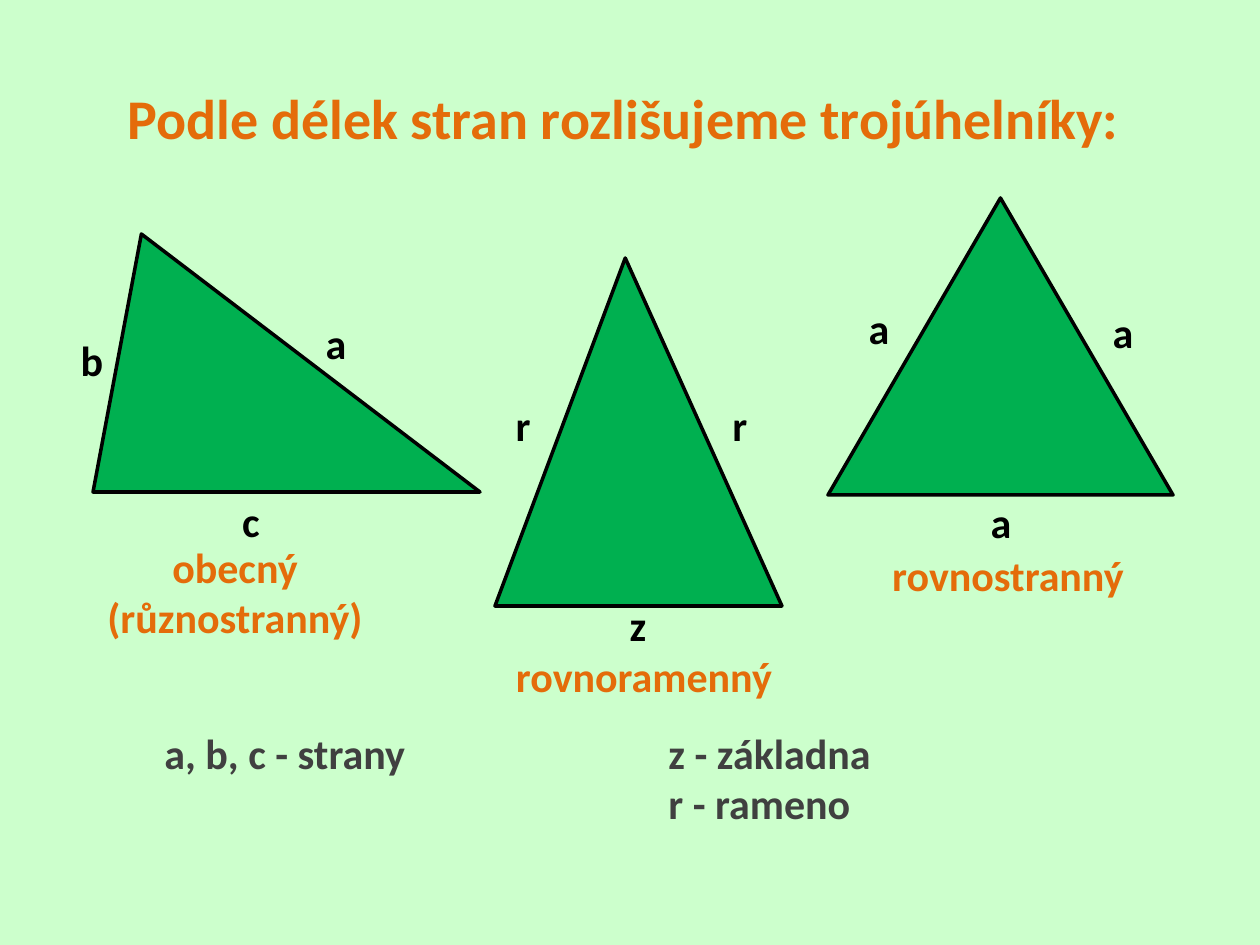
import pptx
import pptx.dml.color
import pptx.enum.shapes
import pptx.enum.text
import pptx.util
from lxml import etree

RGBColor = pptx.dml.color.RGBColor
MINT = RGBColor(0xCC, 0xFF, 0xCC)
GREEN = RGBColor(0x00, 0xB0, 0x50)
ORANGE = RGBColor(0xE4, 0x6C, 0x0A)
BLACK = RGBColor(0x00, 0x00, 0x00)
GRAY = RGBColor(0x40, 0x40, 0x40)
LEFT = pptx.enum.text.PP_ALIGN.LEFT
CENTER = pptx.enum.text.PP_ALIGN.CENTER
TOP = pptx.enum.text.MSO_ANCHOR.TOP
MIDDLE = pptx.enum.text.MSO_ANCHOR.MIDDLE
EMU_PER_PX = 914400 // 126
LINE_HEIGHT = 63
LABEL_WIDTH = 48
NAME_WIDTH = 284

TRIANGLES = [
    {
        "box": (93, 234, 387, 258),
        "apex": 0.125,
        "labels": [("b", -1, 94), ("a", 243, 77), ("c", 158, 255)],
        "name": ("obecný\n(různostranný)", 142, 301),
    },
    {
        "box": (495, 258, 287, 348),
        "apex": 0.454,
        "labels": [("r", 28, 135), ("r", 245, 135), ("z", 143, 335)],
        "name": ("rovnoramenný", 149, 386),
    },
    {
        "box": (828, 198, 345, 297),
        "apex": 0.5,
        "labels": [("a", 51, 98), ("a", 295, 102), ("a", 173, 292)],
        "name": ("rovnostranný", 180, 345),
    },
]


def px(*lengths):
    """Turn lengths in px into EMU."""
    return [pptx.util.Emu(length * EMU_PER_PX) for length in lengths]


def add_text(slide, text, box, *, color, size=24, align=CENTER, anchor=TOP, wrap=True):
    """Add a bold text box and return its text frame."""
    frame = slide.shapes.add_textbox(*px(*box)).text_frame
    frame.word_wrap = wrap
    frame.vertical_anchor = anchor
    frame.text = text
    for paragraph in frame.paragraphs:
        paragraph.alignment = align
        for run in paragraph.runs:
            run.font.name = "Calibri"
            run.font.size = pptx.util.Pt(size)
            run.font.bold = True
            run.font.color.rgb = color
    return frame


def add_triangle(slide, box, apex, labels, name):
    """Draw a triangle with its side labels and its name."""
    left, top = box[:2]
    kind = pptx.enum.shapes.MSO_SHAPE.ISOSCELES_TRIANGLE
    shape = slide.shapes.add_shape(kind, *px(*box))
    shape.adjustments[0] = apex
    shape.shadow.inherit = False
    shape.fill.solid()
    shape.fill.fore_color.rgb = GREEN
    shape.line.color.rgb = BLACK
    shape.line.width = pptx.util.Pt(2)
    for text, center, offset in labels:
        label_box = (left + center - LABEL_WIDTH // 2, top + offset, LABEL_WIDTH, LINE_HEIGHT)
        add_text(slide, text, label_box, color=BLACK, wrap=False)
    text, center, offset = name
    name_box = (left + center - NAME_WIDTH // 2, top + offset, NAME_WIDTH, LINE_HEIGHT)
    add_text(slide, text, name_box, color=ORANGE, wrap=False)


def add_legend(slide, box, column):
    """Write the legend with its second column at a tab stop."""
    text = "a, b, c - strany\tz - základna\n\tr - rameno"
    frame = add_text(slide, text, box, color=GRAY, align=LEFT)
    for paragraph in frame.paragraphs:
        properties = paragraph._p.get_or_add_pPr()
        tabs = etree.SubElement(properties, pptx.oxml.ns.qn("a:tabLst"))
        position = str(int(px(column)[0]))
        etree.SubElement(tabs, pptx.oxml.ns.qn("a:tab"), pos=position, algn="l")


def main():
    """Build the slide and save it."""
    presentation = pptx.Presentation()
    presentation.slide_width, presentation.slide_height = px(1260, 945)
    slide = presentation.slides.add_slide(presentation.slide_layouts[6])
    slide.background.fill.solid()
    slide.background.fill.fore_color.rgb = MINT
    title = "Podle délek stran rozlišujeme trojúhelníky: "
    add_text(slide, title, (63, 38, 1134, 158), color=ORANGE, size=32, anchor=MIDDLE)
    for triangle in TRIANGLES:
        add_triangle(slide, **triangle)
    add_legend(slide, (152, 721, 955, 115), 504)
    presentation.save("out.pptx")


if __name__ == "__main__":
    main()
